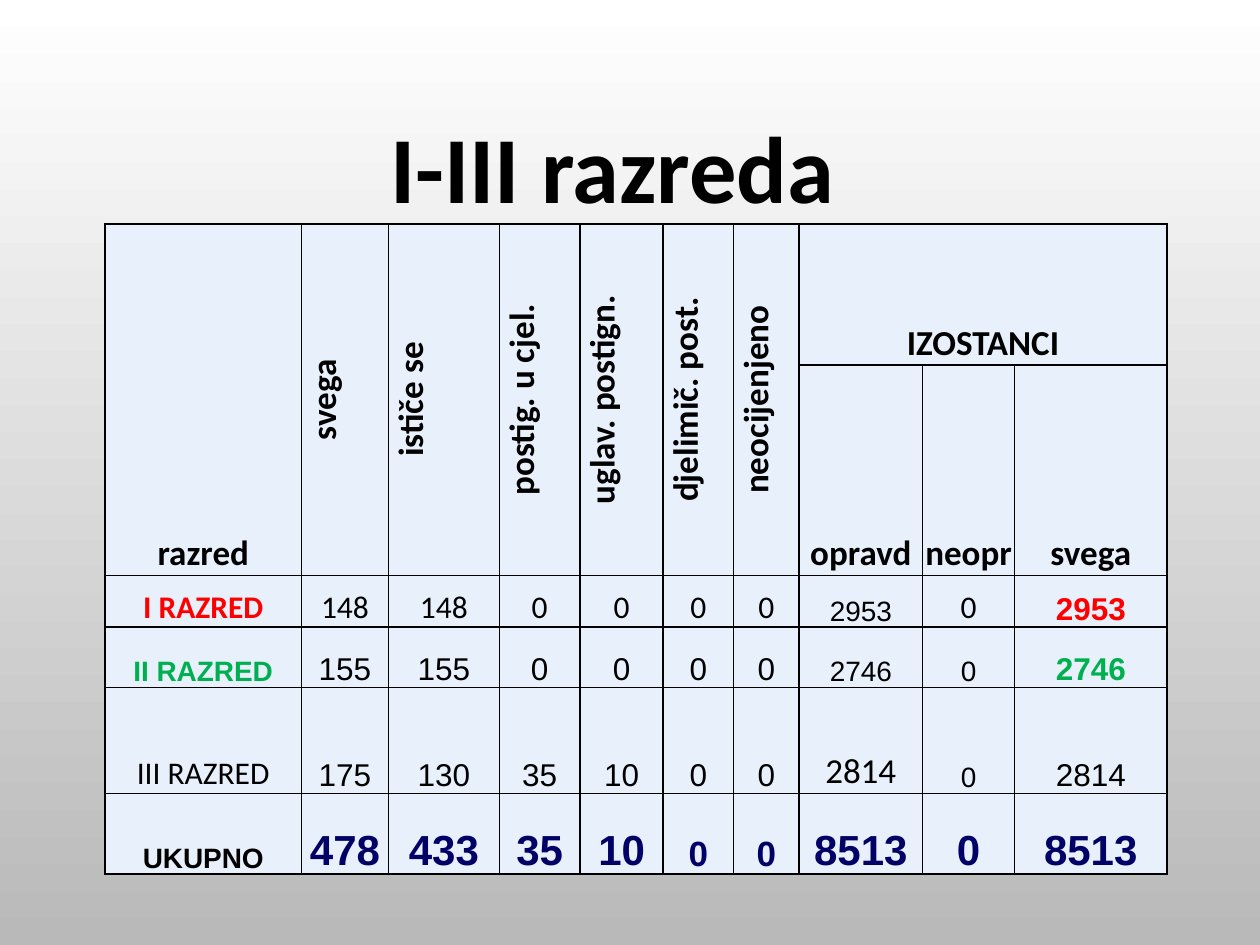
from dataclasses import dataclass, replace

from lxml import etree
from pptx import Presentation
from pptx import util as u
from pptx.dml import color
from pptx.enum import text
from pptx.oxml import ns

BLACK, RED, GREEN, NAVY = "000000", "FF0000", "00B050", "000066"
CELL_FILL = "E8F0FC"


@dataclass(frozen=True)
class Style:
    size: float
    name: str = "Arial"
    color: str = BLACK
    bold: bool = False


@dataclass(frozen=True)
class Entry:
    words: str
    style: Style
    rows: int = 1
    columns: int = 1
    vertical: bool = False


def rgb(value: str) -> color.RGBColor:
    return color.RGBColor.from_string(value)


def write(para, words: str, style: Style) -> None:
    span = para.add_run()
    span.text = words
    formats = {"size": u.Pt(style.size), "name": style.name, "bold": style.bold}
    for key, value in formats.items():
        setattr(span.font, key, value)
    span.font.color.rgb = rgb(style.color)


def format_cell(cell) -> None:
    """Give a cell thin black borders, a pale fill and tight margins."""
    properties = cell._tc.get_or_add_tcPr()
    for side in ("lnL", "lnR", "lnT", "lnB"):
        line = etree.SubElement(properties, ns.qn(f"a:{side}"), w=str(u.Pt(1)))
        fill = etree.SubElement(line, ns.qn("a:solidFill"))
        etree.SubElement(fill, ns.qn("a:srgbClr"), val=BLACK)
    cell.fill.solid()
    cell.fill.fore_color.rgb = rgb(CELL_FILL)
    formats = {
        "margin_left": u.Pt(0.75),
        "margin_top": u.Pt(0.75),
        "margin_right": u.Pt(0.75),
        "margin_bottom": u.Pt(0),
        "vertical_anchor": text.MSO_ANCHOR.BOTTOM,
    }
    for key, value in formats.items():
        setattr(cell, key, value)


def fill_cell(table, row: int, column: int, entry: Entry) -> None:
    cell = table.cell(row, column)
    if entry.rows > 1 or entry.columns > 1:
        cell.merge(table.cell(row + entry.rows - 1, column + entry.columns - 1))
    if entry.vertical:
        cell._tc.get_or_add_tcPr().set("vert", "vert270")
    para = cell.text_frame.paragraphs[0]
    para.alignment = text.PP_ALIGN.CENTER
    write(para, entry.words, entry.style)


def entries(words: str, *styles: Style) -> list[Entry]:
    return [Entry(word, style) for word, style in zip(words.split(), styles)]


# Text styles
HEAD = Style(20, "Calibri", bold=True)
CALIBRI = Style(18, "Calibri")
ARIAL = Style(18)
SMALL = Style(16)
TOTAL = Style(24, color=NAVY, bold=True)
TOTAL_SMALL = replace(TOTAL, size=20)

# Table contents: the first column and its row of figures
VERTICAL_HEADS = ["svega", "ističe se", "postig. u cjel.", "uglav. postign.",
                  "djelimič. post.", "neocijenjeno"]
TOP_HEADS = [
    Entry("razred", HEAD, rows=2),
    *(Entry(words, HEAD, rows=2, vertical=True) for words in VERTICAL_HEADS),
    Entry("IZOSTANCI", HEAD, columns=3),
]
SUB_HEADS = entries("opravd neopr svega", *[HEAD] * 3)
BODY = [
    [Entry("I RAZRED", replace(CALIBRI, color=RED, bold=True)),
     *entries("148 148 0 0 0 0 2953 0 2953", *[CALIBRI] * 6, SMALL, CALIBRI,
              replace(ARIAL, color=RED, bold=True))],
    [Entry("II RAZRED", replace(SMALL, color=GREEN, bold=True)),
     *entries("155 155 0 0 0 0 2746 0 2746", *[ARIAL] * 6, SMALL, SMALL,
              replace(ARIAL, color=GREEN, bold=True))],
    [Entry("III RAZRED", CALIBRI),
     *entries("175 130 35 10 0 0 2814 0 2814", *[ARIAL] * 6,
              replace(CALIBRI, size=20), SMALL, ARIAL)],
    [Entry("UKUPNO", replace(SMALL, bold=True)),
     *entries("478 433 35 10 0 0 8513 0 8513", *[TOTAL] * 4,
              *[TOTAL_SMALL] * 2, *[TOTAL] * 3)],
]
COLUMN_WIDTHS = [112.3, 49.7, 63.4, 46.1, 47.5, 40.3, 37.4, 70.6, 52.6, 87.1]
ROW_HEIGHTS = [80.6, 40.3, 29.5, 34.6, 60.5, 46.1]


def add_background(page) -> None:
    fill = page.background.fill
    fill.gradient()
    fill.gradient_angle = 270
    for stop, value, position in zip(fill.gradient_stops, ("FFFFFF", "B9B9B9"), (0, 1)):
        stop.color.rgb = rgb(value)
        stop.position = position


def add_grades_table(page) -> None:
    table = page.shapes.add_table(
        len(ROW_HEIGHTS), len(COLUMN_WIDTHS), u.Pt(60), u.Pt(128),
        u.Pt(sum(COLUMN_WIDTHS)), u.Pt(sum(ROW_HEIGHTS))).table
    for column, width in zip(table.columns, COLUMN_WIDTHS):
        column.width = u.Pt(width)
    for row, height in zip(table.rows, ROW_HEIGHTS):
        row.height = u.Pt(height)
    for cell in table.iter_cells():
        format_cell(cell)
    # The second header row starts under the absences heading
    for row, line in enumerate([TOP_HEADS, SUB_HEADS, *BODY]):
        first = 7 if line is SUB_HEADS else 0
        for column, entry in enumerate(line, first):
            fill_cell(table, row, column, entry)


def add_title(page) -> None:
    box = page.shapes.add_textbox(u.Pt(216), u.Pt(54), u.Pt(270.7), u.Pt(74.2))
    box.text_frame.word_wrap = False
    box.text_frame.auto_size = text.MSO_AUTO_SIZE.SHAPE_TO_FIT_TEXT
    para = box.text_frame.paragraphs[0]
    para.line_spacing = 1.07
    para.space_after = u.Pt(8)
    write(para, "I-III razreda", Style(54, "Calibri", bold=True))


def main() -> None:
    deck = Presentation()
    deck.slide_width, deck.slide_height = u.Pt(720), u.Pt(540)
    page = deck.slides.add_slide(deck.slide_layouts[6])
    add_background(page)
    add_grades_table(page)
    add_title(page)
    deck.save("out.pptx")


if __name__ == "__main__":
    main()
